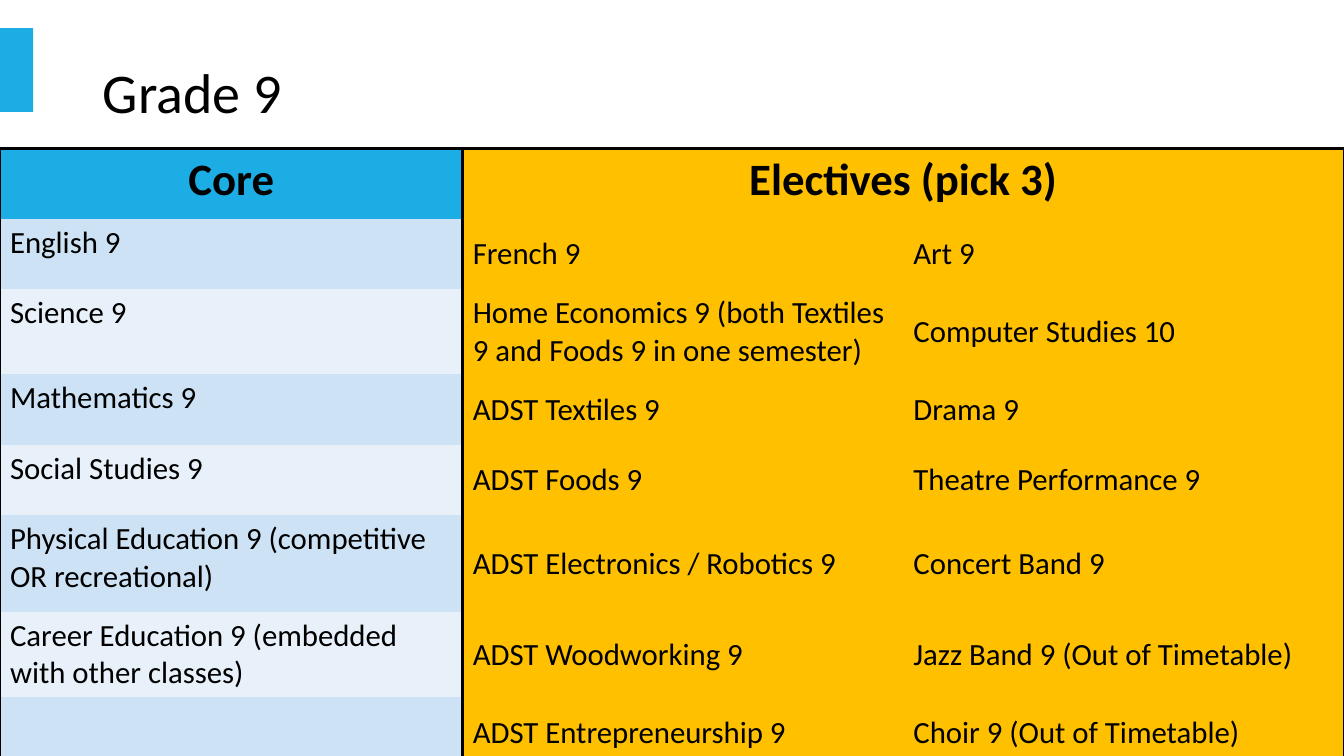
from lxml import etree
from pptx import Presentation
from pptx.dml.color import RGBColor
from pptx.enum import shapes, text
from pptx.oxml import ns
from pptx.util import Inches, Pt

BLUE = RGBColor(0x1C, 0xAD, 0xE4)
BLUE_BAND = RGBColor(0xCD, 0xE3, 0xF5)
PALE_BAND = RGBColor(0xE8, 0xF1, 0xFA)
GOLD = RGBColor(0xFF, 0xC0, 0x00)
BLACK = RGBColor(0, 0, 0)

COURSES = [
    ("Core", "Electives (pick 3)", ""),
    ("English 9", "French 9", "Art 9"),
    ("Science 9", "Home Economics 9 (both Textiles 9 and Foods 9 in one semester)", "Computer Studies 10"),
    ("Mathematics 9", "ADST Textiles 9", "Drama 9"),
    ("Social Studies 9", "ADST Foods 9", "Theatre Performance 9"),
    ("Physical Education 9 (competitive OR recreational)", "ADST Electronics / Robotics 9", "Concert Band 9"),
    ("Career Education 9 (embedded with other classes)", "ADST Woodworking 9", "Jazz Band 9 (Out of Timetable)"),
    ("", "ADST Entrepreneurship 9", "Choir 9 (Out of Timetable)"),
]
COLUMN_WIDTHS = [4.59, 4.37, 4.37]
ROW_HEIGHTS = [0.7, 0.7, 0.7, 0.7, 0.7, 0.96, 0.7, 0.7]


def set_font(para, size, bold=False):
    style = {"name": "Calibri", "size": Pt(size), "bold": bold}
    for name, value in style.items():
        setattr(para.font, name, value)
    para.font.color.rgb = BLACK


def set_borders(cell, black_sides):
    properties = cell._tc.get_or_add_tcPr()
    for side in "LRTB":
        line = etree.SubElement(properties, ns.qn(f"a:ln{side}"), w=str(Pt(2.25)))
        if side in black_sides:
            fill = etree.SubElement(line, ns.qn("a:solidFill"))
            etree.SubElement(fill, ns.qn("a:srgbClr"), val=str(BLACK))
        else:
            etree.SubElement(line, ns.qn("a:noFill"))


deck = Presentation()
deck.slide_width = Inches(13.33)
deck.slide_height = Inches(7.5)
page = deck.slides.add_slide(deck.slide_layouts[5])

accent = page.shapes.add_shape(
    shapes.MSO_SHAPE.RECTANGLE, Inches(0), Inches(0.28), Inches(0.33), Inches(0.83))
accent.shadow.inherit = False
accent.fill.solid()
accent.fill.fore_color.rgb = BLUE
accent.line.fill.background()

title = page.shapes.title
title_place = {"left": 0.92, "top": 0.22, "width": 11.5, "height": 1.45}
for name, value in title_place.items():
    setattr(title, name, Inches(value))
title.text_frame.text = "Grade 9"
title.text_frame.vertical_anchor = text.MSO_ANCHOR.MIDDLE
heading = title.text_frame.paragraphs[0]
heading.alignment = text.PP_ALIGN.LEFT
heading.line_spacing = 0.9
set_font(heading, 40)

table = page.shapes.add_table(
    len(COURSES), len(COLUMN_WIDTHS), Inches(0), Inches(1.47),
    Inches(sum(COLUMN_WIDTHS)), Inches(sum(ROW_HEIGHTS))).table
for column, width in zip(table.columns, COLUMN_WIDTHS):
    column.width = Inches(width)
for row, height in zip(table.rows, ROW_HEIGHTS):
    row.height = Inches(height)
table.cell(0, 1).merge(table.cell(0, 2))

for row_index, courses in enumerate(COURSES):
    is_header = row_index == 0
    is_last = row_index == len(COURSES) - 1
    for column_index, course in enumerate(courses):
        cell = table.cell(row_index, column_index)
        sides = ["LR", "L", "R"][column_index]
        if is_header:
            sides = "LRT"
        elif is_last:
            sides += "B"
        set_borders(cell, sides)

        color = GOLD
        if column_index == 0:
            color = BLUE if is_header else [PALE_BAND, BLUE_BAND][row_index % 2]
        cell.fill.solid()
        cell.fill.fore_color.rgb = color

        if course:
            cell.text = course
            para = cell.text_frame.paragraphs[0]
            set_font(para, 32 if is_header else 22, is_header)
            if is_header:
                para.alignment = text.PP_ALIGN.CENTER
            elif column_index > 0:
                cell.vertical_anchor = text.MSO_ANCHOR.MIDDLE

deck.save("out.pptx")
